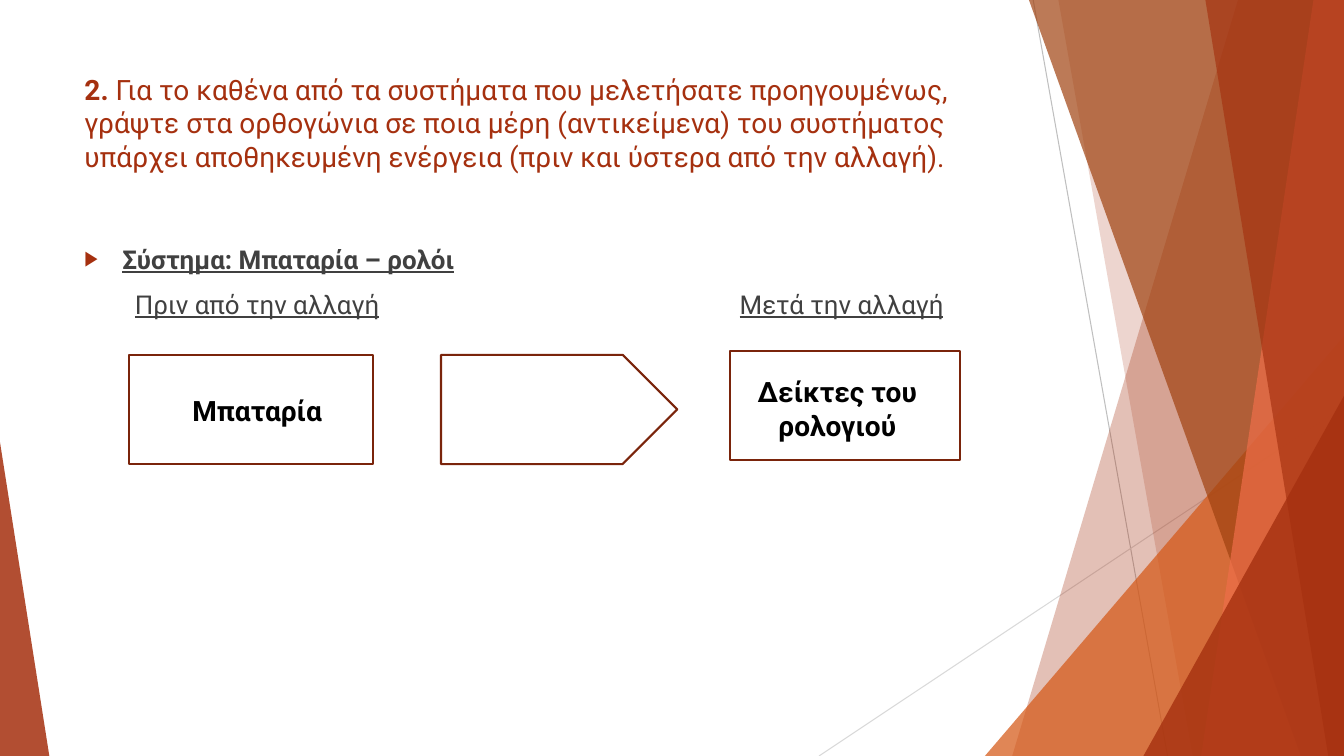
"""Build the slide on where energy is stored in a battery clock."""
import lxml.etree
import pptx
import pptx.dml.color
import pptx.enum.shapes
import pptx.enum.text
import pptx.oxml
import pptx.oxml.ns
import pptx.util

PX = 9525
WIDE, HIGH = 1280, 720
FONT = "Roboto"
COLOR = {"rust": "A5300F", "orange": "D55816", "brown": "A04210", "coral": "EE6E4A",
         "edge": "7A240B", "gray": "404040", "black": "000000", "white": "FFFFFF",
         "mid": "BFBFBF", "pale": "D9D9D9"}
KIND = pptx.enum.shapes.MSO_SHAPE
ALIGN = pptx.enum.text.PP_ALIGN
QN = pptx.oxml.ns.qn
rgb = pptx.dml.color.RGBColor.from_string

deck = pptx.Presentation()
deck.slide_width, deck.slide_height = WIDE * PX, HIGH * PX
slide = deck.slides.add_slide(deck.slide_layouts[6])
shapes = slide.shapes


def paint(shape, fill, alpha=100, line=None):
    shape.shadow.inherit = False
    shape.fill.solid()
    shape.fill.fore_color.rgb = rgb(COLOR[fill])
    if alpha < 100:
        tint = shape.fill._xPr.find(QN("a:solidFill"))[0]
        lxml.etree.SubElement(tint, QN("a:alpha"), val=str(alpha * 1000))
    if line:
        shape.line.color.rgb = rgb(COLOR[line])
        shape.line.width = pptx.util.Pt(1.5)
    else:
        shape.line.fill.background()


def write(box, lines, size=20, color="black", align=ALIGN.LEFT, before=0):
    frame = shapes.add_textbox(*[n * PX for n in box]).text_frame
    frame.word_wrap = True
    for i, line in enumerate(lines):
        para = frame.add_paragraph() if i else frame.paragraphs[0]
        para.alignment = align
        if i:
            para.space_before = pptx.util.Pt(before)
        for words, bold, under in line:
            run = para.add_run()
            run.text = words
            run.font.name = FONT
            run.font.size = pptx.util.Pt(size)
            run.font.bold, run.font.underline = bold, under
            run.font.color.rgb = rgb(COLOR[color])
    return frame


for start, end, color in [((984, 0), (1112, 720), "mid"), ((1280, 387), (780, 720), "pale")]:
    ray = shapes.add_connector(pptx.enum.shapes.MSO_CONNECTOR.STRAIGHT,
                               *[n * PX for n in start + end])
    ray.line.color.rgb = rgb(COLOR[color])
    ray.line.width = pptx.util.Pt(0.75)
    lxml.etree.SubElement(ray._element.spPr, QN("a:effectLst"))

facets = [
    ("band", (1179, 964), "rust", 30),
    ("band", (1008, 1136), "rust", 20),
    ("peak", (938, 320, 342, 1), "orange", 72),
    ("band", (980, 1239), "brown", 70),
    ("band", (1251, 1144), "coral", 70),
    ("band", (1148, 1265), "rust", 65),
    ("peak", (1089, 377, 191, 1), "rust", 80),
    ("peak", (0, 421, 47, 0), "rust", 85),
]
for kind, place, color, alpha in facets:
    if kind == "band":
        top, base = place
        pen = shapes.build_freeform(top, 0, scale=PX)
        pen.add_line_segments([(WIDE, 0), (WIDE, HIGH), (base, HIGH)], close=True)
        facet = pen.convert_to_shape()
    else:
        left, top, width, apex = place
        facet = shapes.add_shape(KIND.ISOSCELES_TRIANGLE, left * PX, top * PX,
                                 width * PX, (HIGH - top) * PX)
        facet.adjustments[0] = apex
    paint(facet, color, alpha)

write((71, 64, 902, 138), [[
    ("2. ", True, False),
    ("Για το καθένα από τα συστήματα που μελετήσατε προηγουμένως, γράψτε στα ορθογώνια "
     "σε ποια μέρη (αντικείμενα) του συστήματος υπάρχει αποθηκευμένη ενέργεια "
     "(πριν και ύστερα από την αλλαγή).", False, False),
]], color="rust")

body = write((71, 227, 902, 86), [
    [("Σύστημα: Μπαταρία – ρολόι", True, True)],
    [("\t", False, False), ("Πριν από την αλλαγή", False, True),
     ("\t", False, False), ("Μετά την αλλαγή", False, True)],
], size=18.5, color="gray", before=10)
head, labels = [para._p.get_or_add_pPr() for para in body.paragraphs]
head.set("marL", str(36 * PX))
head.set("indent", str(-36 * PX))
hue = lxml.etree.SubElement(head, QN("a:buClr"))
lxml.etree.SubElement(hue, QN("a:srgbClr"), val=COLOR["rust"])
lxml.etree.SubElement(head, QN("a:buSzPct"), val="80000")
lxml.etree.SubElement(head, QN("a:buFont"), typeface=FONT)
lxml.etree.SubElement(head, QN("a:buChar"), char="▶")
stops = lxml.etree.SubElement(labels, QN("a:tabLst"))
for stop in (48, 624):
    lxml.etree.SubElement(stops, QN("a:tab"), pos=str(stop * PX), algn="l")

for kind, left, top, width in [(KIND.RECTANGLE, 123, 338, 232),
                               (KIND.PENTAGON, 420, 338, 225),
                               (KIND.RECTANGLE, 695, 334, 219)]:
    paint(shapes.add_shape(kind, left * PX, top * PX, width * PX, 104 * PX),
          "white", line="edge")

for box, words in [((123, 370, 244, 42), "Μπαταρία"),
                   ((711, 352, 173, 74), "Δείκτες του ρολογιού")]:
    write(box, [[(words, True, False)]], align=ALIGN.CENTER)

deck.save("out.pptx")
